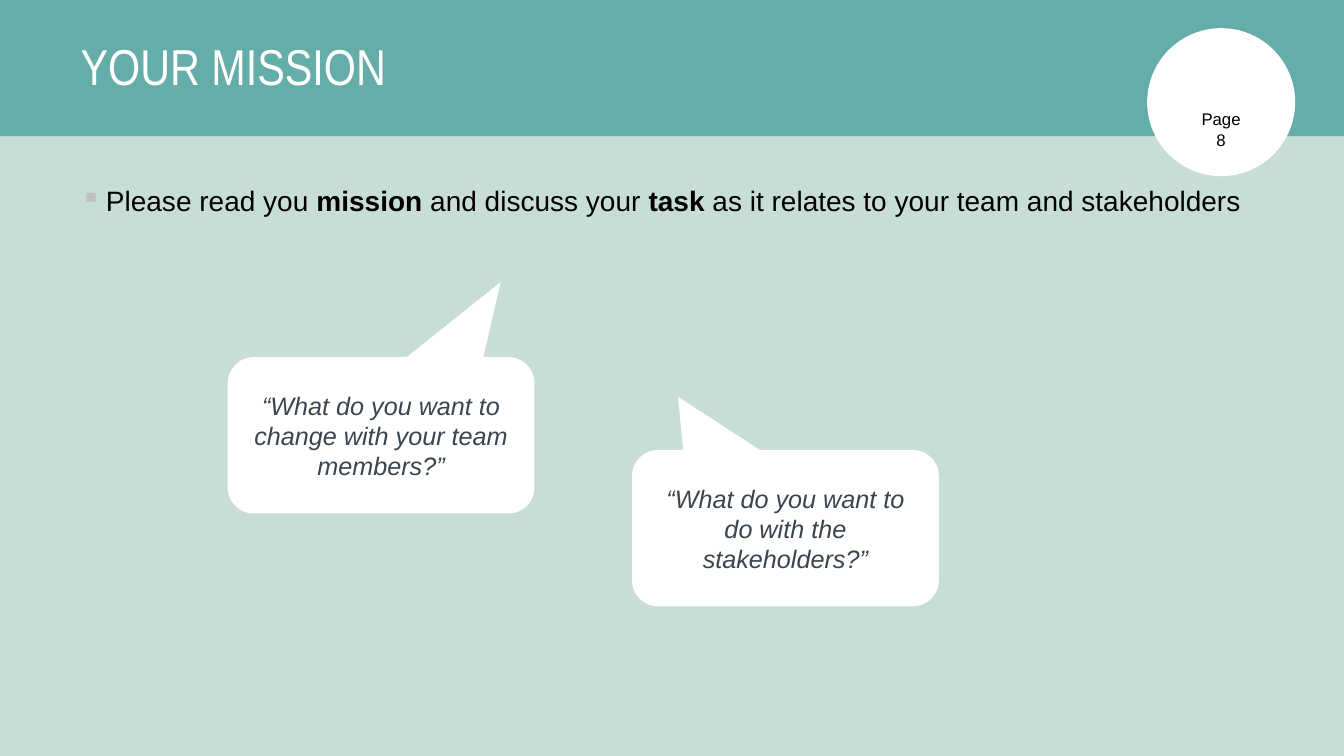
from lxml import etree
from pptx import Presentation
from pptx.dml.color import RGBColor
from pptx.enum.shapes import MSO_SHAPE
from pptx.enum.text import MSO_ANCHOR, PP_ALIGN
from pptx.oxml.ns import qn
from pptx.util import Cm, Pt

RECTANGLE, OVAL = MSO_SHAPE.RECTANGLE, MSO_SHAPE.OVAL
CALLOUT = MSO_SHAPE.ROUNDED_RECTANGULAR_CALLOUT
TOP, MIDDLE, BOTTOM = MSO_ANCHOR.TOP, MSO_ANCHOR.MIDDLE, MSO_ANCHOR.BOTTOM
LEFT, CENTER = PP_ALIGN.LEFT, PP_ALIGN.CENTER

BACKGROUND = RGBColor(0xB6, 0xD4, 0xCD)
PALE_GREEN = RGBColor(0xC8, 0xDD, 0xD6)
TEAL = RGBColor(0x65, 0xAD, 0xA8)
WHITE = RGBColor(0xFF, 0xFF, 0xFF)
BLACK = RGBColor(0x00, 0x00, 0x00)
SLATE = RGBColor(0x3B, 0x45, 0x50)
BULLET_GRAY = "BFBFBF"

TITLE = "YOUR MISSION"
PAGE_LABEL = ["Page", "\n", "8"]
TASK = ["Please read you ", "mission", " and discuss your ", "task",
        " as it relates to your team and stakeholders"]
BOLD_WORDS = ("mission", "task")
# Words, left and top in cm, tip of the callout relative to its size
QUESTIONS = [
    ("“What do you want to change with your team members?”", 5.74, 9.0, (0.39, -0.98)),
    ("“What do you want to do with the stakeholders?”", 15.93, 11.34, (-0.35, -0.84)),
]

SLIDE_WIDTH, SLIDE_HEIGHT = 33.87, 19.05
BAND_HEIGHT = 3.43
MARGIN, CONTENT_WIDTH = 1.78, 30.28
BADGE_SIZE = 3.73
QUESTION_WIDTH, QUESTION_HEIGHT = 7.73, 3.94
BULLET_INDENT = 0.64


def add_filled(shapes, kind, left, top, width, height, color):
    shape = shapes.add_shape(kind, Cm(left), Cm(top), Cm(width), Cm(height))
    shape.shadow.inherit = False
    shape.fill.solid()
    shape.fill.fore_color.rgb = color
    shape.line.fill.background()
    return shape


def write_text(shape, spans, size, color, font="Arial", italic=False, align=CENTER,
               anchor=MIDDLE, line_spacing=None):
    frame = shape.text_frame
    frame.word_wrap = True
    frame.vertical_anchor = anchor
    para = frame.paragraphs[0]
    para.alignment = align
    para.line_spacing = line_spacing
    for words in spans:
        if words == "\n":
            para.add_line_break()
            continue
        span = para.add_run()
        span.text = words
        span.font.name = font
        span.font.size = Pt(size)
        span.font.bold = words in BOLD_WORDS
        span.font.italic = italic
        span.font.color.rgb = color
    return para


def add_bullet(para, character):
    properties = para._p.get_or_add_pPr()
    properties.set("marL", str(Cm(BULLET_INDENT)))
    properties.set("indent", str(-Cm(BULLET_INDENT)))
    bullet_color = etree.SubElement(properties, qn("a:buClr"))
    etree.SubElement(bullet_color, qn("a:srgbClr"), val=BULLET_GRAY)
    etree.SubElement(properties, qn("a:buChar"), char=character)


def main():
    deck = Presentation()
    deck.slide_width, deck.slide_height = Cm(SLIDE_WIDTH), Cm(SLIDE_HEIGHT)
    page = deck.slides.add_slide(deck.slide_layouts[5])
    page.background.fill.solid()
    page.background.fill.fore_color.rgb = BACKGROUND
    shapes = page.shapes

    add_filled(shapes, RECTANGLE, 0, BAND_HEIGHT, SLIDE_WIDTH,
               SLIDE_HEIGHT - BAND_HEIGHT, PALE_GREEN)
    band = add_filled(shapes, RECTANGLE, 0, 0, SLIDE_WIDTH, BAND_HEIGHT, TEAL)

    title = shapes.title
    title.left, title.top = Cm(MARGIN), Cm(0.23)
    title.width, title.height = Cm(CONTENT_WIDTH), Cm(3.02)
    write_text(title, [TITLE], 36, WHITE, font="Arial Narrow", align=LEFT, line_spacing=0.9)
    band.element.addnext(title.element)

    body = shapes.add_textbox(Cm(MARGIN), Cm(4.6), Cm(CONTENT_WIDTH), Cm(13.11))
    task = write_text(body, TASK, 20, BLACK, align=LEFT, anchor=TOP, line_spacing=0.9)
    add_bullet(task, "▪")

    badge = add_filled(shapes, OVAL, 28.91, 0.71, BADGE_SIZE, BADGE_SIZE, WHITE)
    write_text(badge, PAGE_LABEL, 12, BLACK, anchor=BOTTOM)

    for words, left, top, tip in QUESTIONS:
        callout = add_filled(shapes, CALLOUT, left, top, QUESTION_WIDTH, QUESTION_HEIGHT, WHITE)
        callout.adjustments[0], callout.adjustments[1] = tip
        write_text(callout, [words], 18, SLATE, italic=True)

    deck.save("out.pptx")


if __name__ == "__main__":
    main()
